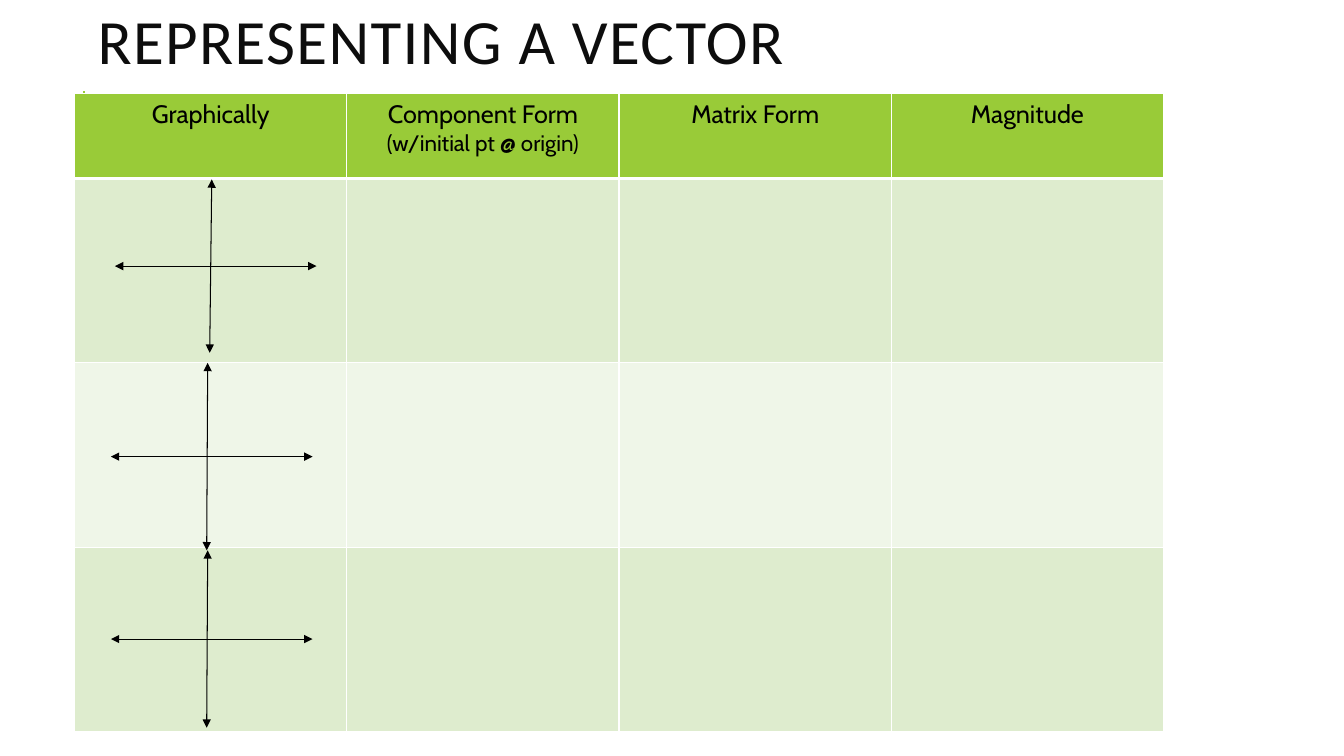
import pptx
import pptx.util
import pptx.dml.color
import pptx.enum.shapes
import pptx.enum.text
import pptx.oxml
import pptx.oxml.ns

RGB = pptx.dml.color.RGBColor
BLACK = RGB(0, 0, 0)
INK = RGB(0x0D, 0x0D, 0x0D)
WHITE = RGB(0xFF, 0xFF, 0xFF)
GREEN = RGB(0x99, 0xCB, 0x38)
BAND = RGB(0xDE, 0xEC, 0xCE)
PALE = RGB(0xEF, 0xF6, 0xE8)

HEADS = [["Graphically"], ["Component Form", "(w/initial pt @ origin)"],
         ["Matrix Form"], ["Magnitude"]]
FILLS = [GREEN, BAND, PALE, BAND]
AXES = [((114, 178, 200, 172), 96, 94, 86),
        ((110, 360, 200, 186), 96, 95, 93),
        ((110, 546, 200, 176), 96, 95, 88)]


def px(num):
    """Turn px, 100 to the inch, into EMU."""
    return pptx.util.Emu(num * 9144)


def add_xml(host, tag, **attrs):
    """Append a drawing element to a host and return it."""
    node = pptx.oxml.parse_xml(f"<a:{tag} {pptx.oxml.ns.nsdecls('a')}/>")
    for key, val in attrs.items():
        node.set(key, str(val))
    host.append(node)
    return node


def add_line(slide, start, end, color, width, heads=False):
    """Draw a straight line, with arrowheads at both ends on request."""
    line = slide.shapes.add_connector(
        pptx.enum.shapes.MSO_CONNECTOR.STRAIGHT,
        *[px(num) for num in (*start, *end)])
    line.line.color.rgb = color
    line.line.width = pptx.util.Pt(width)
    if heads:
        stroke = line.line._get_or_add_ln()
        add_xml(stroke, "headEnd", type="triangle")
        add_xml(stroke, "tailEnd", type="triangle")
    add_xml(line._element.spPr, "effectLst")


def add_title(slide, box):
    """Write the title in its box."""
    frame = slide.shapes.add_textbox(*map(px, box)).text_frame
    frame.word_wrap = True
    frame.vertical_anchor = pptx.enum.text.MSO_ANCHOR.MIDDLE
    frame.text = "REPRESENTING A VECTOR"
    para = frame.paragraphs[0]
    para.line_spacing = 0.8
    font = para.runs[0].font
    font.name = "Calibri"
    font.size = pptx.util.Pt(45)
    font.color.rgb = INK
    font._element.set("spc", "100")


def style_cell(cell, fill, base):
    """Give a cell its white borders and its fill."""
    props = cell._tc.get_or_add_tcPr()
    for side, width in zip("LRTB", (1, 1, 1, base)):
        edge = add_xml(props, f"ln{side}", w=pptx.util.Pt(width))
        add_xml(add_xml(edge, "solidFill"), "srgbClr", val=WHITE)
    cell.fill.solid()
    cell.fill.fore_color.rgb = fill


def fill_head(cell, lines):
    """Write the centred lines of a column head."""
    cell.text_frame.text = "\n".join(lines)
    for para, size in zip(cell.text_frame.paragraphs, (18, 16)):
        para.alignment = pptx.enum.text.PP_ALIGN.CENTER
        font = para.runs[0].font
        font.name = "Cabin"
        font.size = pptx.util.Pt(size)
        font.bold = False
        font.color.rgb = BLACK


def add_grid(slide, box):
    """Build the table of vector forms in its box."""
    head = 84
    table = slide.shapes.add_table(
        len(FILLS), len(HEADS), *map(px, box)).table
    table.first_row = table.horz_banding = False
    for col in table.columns:
        col.width = px(box[2] // len(HEADS))
    for num, row in enumerate(table.rows):
        row.height = px((box[3] - head) // (len(FILLS) - 1) if num else head)
        for cell in row.cells:
            style_cell(cell, FILLS[num], 1 if num else 3)
    for cell, lines in zip(table.rows[0].cells, HEADS):
        fill_head(cell, lines)


def add_axes(slide, box, top, base, mid):
    """Draw a pair of axes; top, base and mid are offsets in the box."""
    left, head, width, height = box
    add_line(slide, (left + top, head), (left + base, head + height),
             BLACK, 0.75, True)
    add_line(slide, (left, head + mid), (left + width, head + mid),
             BLACK, 0.75, True)


def main():
    """Build the slide and save it."""
    deck = pptx.Presentation()
    deck.slide_width, deck.slide_height = px(1333), px(750)
    slide = deck.slides.add_slide(deck.slide_layouts[6])
    add_line(slide, (83, 190), (83, 90), GREEN, 1.5)
    add_title(slide, (87, 12, 940, 68))
    add_grid(slide, (74, 93, 1080, 633))
    for axes in AXES:
        add_axes(slide, *axes)
    deck.save("out.pptx")


if __name__ == "__main__":
    main()
